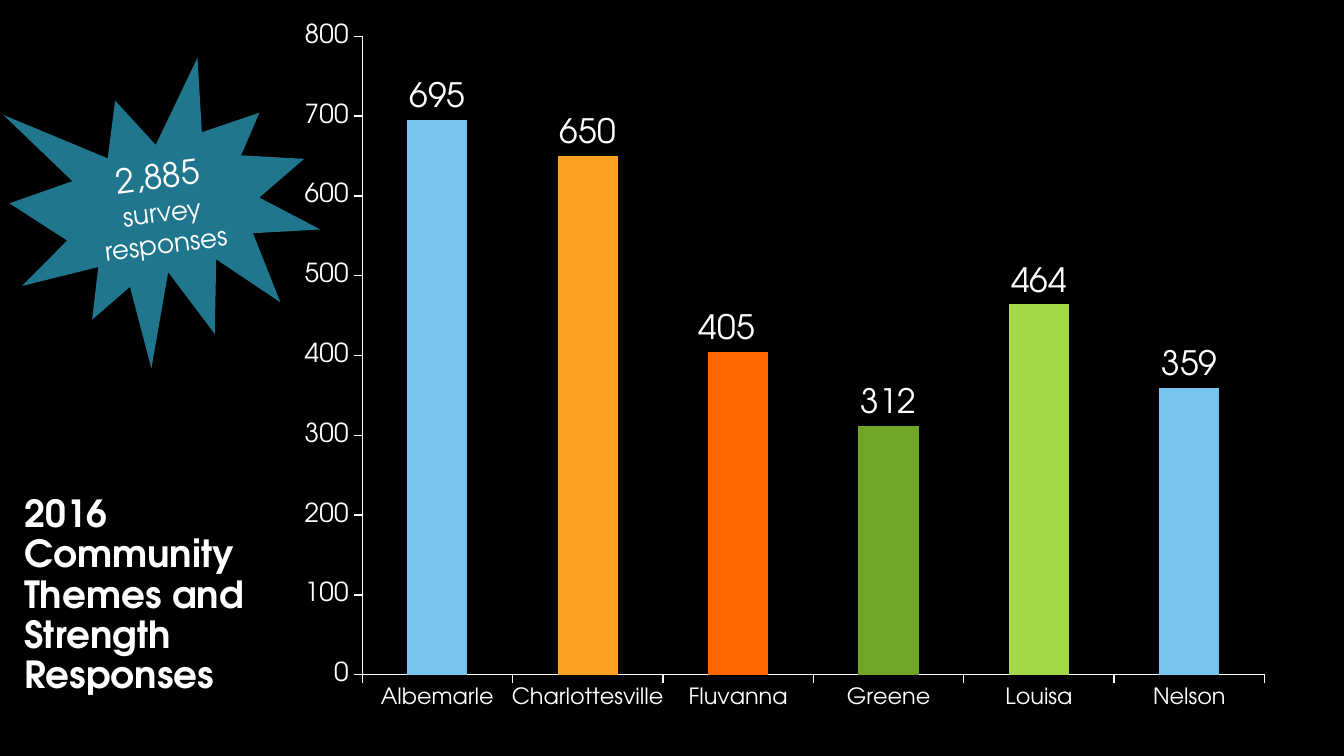
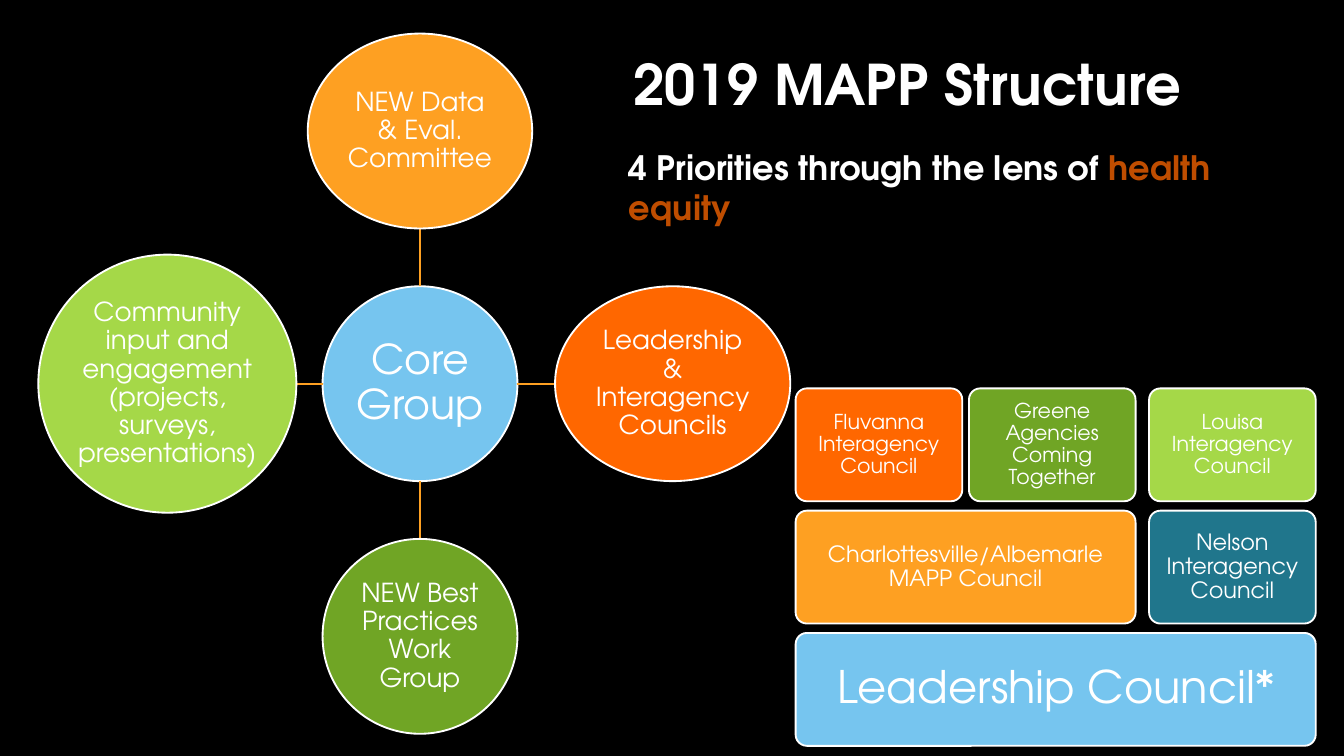
"""Builds two slides on the MAPP survey responses and the 2019 MAPP structure."""
from lxml import etree
from pptx import Presentation
from pptx import util as u
from pptx.chart.data import CategoryChartData
from pptx.dml.color import RGBColor
from pptx.enum import chart as ch, shapes, text
from pptx.oxml import ns


class Theme:
    font = "TeX Gyre Adventor"
    black, white, rust = "000000", "FFFFFF", "BF4D00"
    sky, amber, orange = "76C5EF", "FEA022", "FF6700"
    green, lime, teal = "70A525", "A5D848", "20768C"
    head, large, core, side, lead = 30, 24, 22, 20, 18
    body, small, tiny = 14, 12, 11


deck = Presentation()
deck.slide_width, deck.slide_height = u.Inches(10), u.Inches(5.625)
cell = deck.slide_width / 100
back = deck.slide_master.background.fill
back.solid()
back.fore_color.rgb = RGBColor.from_string(Theme.black)
mid, left = text.PP_ALIGN.CENTER, text.PP_ALIGN.LEFT
oval = shapes.MSO_SHAPE.OVAL
tile = shapes.MSO_SHAPE.ROUNDED_RECTANGLE


def write(shape, runs, align=mid, space=0.9, pad=None, bold=False):
    """Fill a shape with one paragraph of (words, size, colour) runs."""
    frame = shape.text_frame
    frame.word_wrap = True
    frame.auto_size = text.MSO_AUTO_SIZE.NONE
    frame.vertical_anchor = text.MSO_ANCHOR.MIDDLE
    if pad is not None:
        frame.margin_left = frame.margin_right = u.Inches(pad)
        frame.margin_top = frame.margin_bottom = u.Inches(pad)
    para = frame.paragraphs[0]
    para.alignment, para.line_spacing = align, space
    for words, size, color in runs:
        run = para.add_run()
        run.text = words
        run.font.name, run.font.size, run.font.bold = Theme.font, u.Pt(size), bold
        run.font.color.rgb = RGBColor.from_string(color)


def draw(slide, kind, area, fill, edge=True):
    """Add a filled shape, its area given in grid cells."""
    shape = slide.shapes.add_shape(kind, *(round(n * cell) for n in area))
    shape.shadow.inherit = False
    shape.fill.solid()
    shape.fill.fore_color.rgb = RGBColor.from_string(fill)
    if edge:
        shape.line.color.rgb = RGBColor.from_string(Theme.white)
        shape.line.width = u.Pt(1)
    else:
        shape.line.fill.background()
    return shape


pages = []
for words, size, align, area in [
    ("2016 Community Themes and Strength Responses", Theme.side, left, (0.8, 34, 20.8, 20.7)),
    ("2019 MAPP Structure", Theme.head, mid, (35, 2.6, 65, 7.8)),
]:
    page = deck.slides.add_slide(deck.slide_layouts[5])
    title = page.shapes.title
    title.left, title.top, title.width, title.height = (round(n * cell) for n in area)
    write(title, [(words, size, Theme.white)], align, bold=True)
    pages.append(page)
survey, plan = pages

data = CategoryChartData()
data.categories = ["Albemarle", "Charlottesville", "Fluvanna", "Greene", "Louisa", "Nelson"]
data.add_series("Series 1", [695, 650, 405, 312, 464, 359])
area = (round(n * cell) for n in (14.2, 0, 85, 54))
chart = survey.shapes.add_chart(ch.XL_CHART_TYPE.COLUMN_CLUSTERED, *area, data).chart
chart.has_legend = chart.has_title = False
chart.font.name, chart.font.size = Theme.font, u.Pt(Theme.lead)
chart.font.color.rgb = RGBColor.from_string(Theme.white)
for axis, size in [(chart.category_axis, Theme.small), (chart.value_axis, Theme.body)]:
    axis.has_major_gridlines = False
    axis.major_tick_mark = ch.XL_TICK_MARK.OUTSIDE
    axis.tick_labels.font.size = u.Pt(size)
    axis.format.line.color.rgb = RGBColor.from_string(Theme.white)
    axis.format.line.width = u.Pt(0.75)
axis.minimum_scale, axis.maximum_scale, axis.major_unit = 0, 800, 100

plot = chart.plots[0]
plot.gap_width, plot.vary_by_categories = 150, False
bars = plot.series[0]
bars.format.fill.solid()
bars.format.fill.fore_color.rgb = RGBColor.from_string(Theme.sky)
hues = [Theme.sky, Theme.amber, Theme.orange, Theme.green, Theme.lime]
for num, hue in enumerate(hues):
    fill = bars.points[num].format.fill
    fill.solid()
    fill.fore_color.rgb = RGBColor.from_string(hue)
tags = bars.data_labels
tags.show_value = True
for tag in (tags, bars.points[2].data_label):
    tag.position = ch.XL_LABEL_POSITION.OUTSIDE_END
    tag.font.size = u.Pt(Theme.lead)
    tag.font.color.rgb = RGBColor.from_string(Theme.white)

root = chart.plots[0].series[0].format.fill and chart.element
frame = [("layoutTarget", "inner"), ("xMode", "edge"), ("yMode", "edge"),
         ("x", 0.15), ("y", 0.05), ("w", 0.79), ("h", 0.88)]
shift = [("x", -0.01), ("y", 0)]
for route, spot, parts in [("//c:plotArea", 0, frame), ("//c:dLbl", 1, shift)]:
    layout = etree.Element(ns.qn("c:layout"))
    hold = etree.SubElement(layout, ns.qn("c:manualLayout"))
    for name, val in parts:
        etree.SubElement(hold, ns.qn("c:" + name)).set("val", str(val))
    root.xpath(route)[0].insert(spot, layout)

burst = draw(survey, shapes.MSO_SHAPE.EXPLOSION1, (0.9, 4.7, 22.7, 22.5), Theme.teal, False)
burst.rotation = 352.7
write(burst, [("2,885", Theme.lead, Theme.white), (" ", Theme.side, Theme.white),
              ("survey responses", Theme.body, Theme.white)], space=1)

wide, thin, tall = 12.4, 0.7, 8.4
cols, rows = [59.2, 72.1, 85.5], [28.9 + n * (tall + thin) for n in range(3)]
for words, size, fill, row, first, last in [
    ("Leadership Council*", Theme.large, Theme.sky, 2, 0, 2),
    ("Charlottesville/Albemarle MAPP Council", Theme.small, Theme.amber, 1, 0, 1),
    ("Fluvanna Interagency Council", Theme.tiny, Theme.orange, 0, 0, 0),
    ("Greene Agencies Coming Together", Theme.tiny, Theme.green, 0, 1, 1),
    ("Nelson Interagency Council", Theme.small, Theme.teal, 1, 2, 2),
    ("Louisa Interagency Council", Theme.tiny, Theme.lime, 0, 2, 2),
]:
    area = (cols[first], rows[row], cols[last] + wide - cols[first], tall)
    block = draw(plan, tile, area, fill)
    block.adjustments[0] = 0.1
    write(block, [(words, size, Theme.white)], pad=0.05)

hub_x, hub_y, hub, step = 31.25, 28.55, 14.5, 18.8
for words, size, fill, dx, dy, w, h in [
    ("Core Group", Theme.core, Theme.sky, 0, 0, hub, hub),
    ("NEW Data & Eval. Committee", Theme.body, Theme.amber, 0, -1, 16.7, hub),
    ("Leadership & Interagency Councils", Theme.body, Theme.orange, 1, 0, 17.5, hub),
    ("NEW Best Practices Work Group", Theme.body, Theme.green, 0, 1, hub, hub),
    ("Community input and engagement (projects, surveys, presentations)",
     Theme.body, Theme.lime, -1, 0, 19.2, 19.2),
]:
    x, y = hub_x + dx * step, hub_y + dy * step
    if dx or dy:
        ends = (hub_x + dx * hub / 2, hub_y + dy * hub / 2, x - dx * w / 2, y - dy * h / 2)
        spoke = plan.shapes.add_connector(
            shapes.MSO_CONNECTOR.STRAIGHT, *(round(n * cell) for n in ends))
        spoke.line.color.rgb = RGBColor.from_string(Theme.amber)
        spoke.line.width = u.Pt(1)
        etree.SubElement(spoke.element.spPr, ns.qn("a:effectLst"))
    disc = draw(plan, oval, (x - w / 2, y - h / 2, w, h), fill)
    write(disc, [(words, size, Theme.white)], pad=0.01)

note = plan.shapes.add_textbox(*(round(n * cell) for n in (45.8, 10.4, 50, 7.1)))
write(note, [("4 Priorities through the lens of ", Theme.lead, Theme.white),
             ("health equity", Theme.lead, Theme.rust)], left, 1, bold=True)
note.text_frame.vertical_anchor = text.MSO_ANCHOR.TOP

deck.save("out.pptx")
